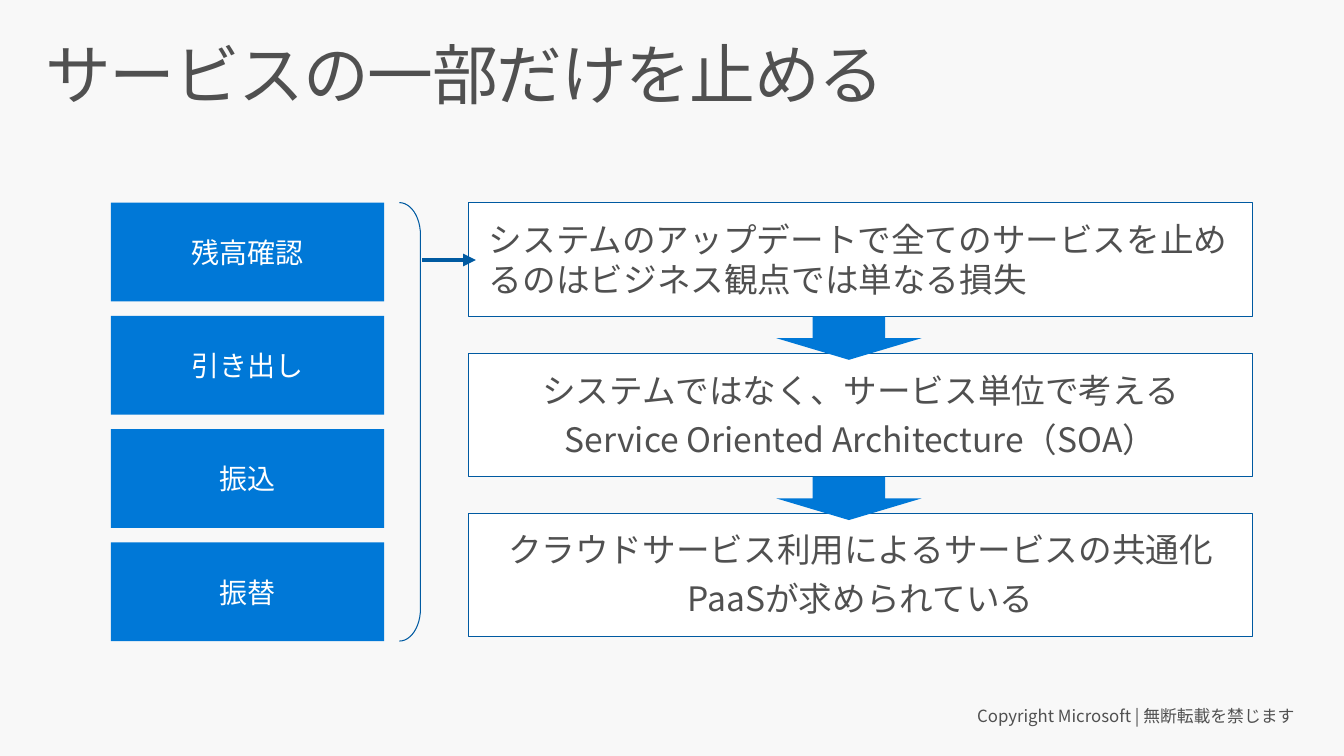
from dataclasses import dataclass

from lxml.etree import SubElement
from pptx import Presentation
from pptx.dml.color import RGBColor
from pptx.enum.shapes import MSO_CONNECTOR as Link, MSO_SHAPE as Kind
from pptx.enum.text import MSO_ANCHOR as Anchor, PP_ALIGN as Align
from pptx.oxml.ns import qn
from pptx.util import Inches, Pt

COLORS = {"page": "F8F8F8", "ink": "505050", "blue": "0078D7",
          "edge": "005AA1", "white": "FFFFFF"}
SANS = "Noto Sans CJK JP"


@dataclass
class Panel:
    top: float
    height: float
    lines: list[str]
    align: Align = Align.CENTER


SERVICES = ["残高確認", "引き出し", "振込", "振替"]
PANELS = [
    Panel(2.01, 1.13, ["システムのアップデートで全てのサービスを止めるのはビジネス観点では単なる損失"], Align.LEFT),
    Panel(3.51, 1.22, ["システムではなく、サービス単位で考える", "Service Oriented Architecture（SOA）"]),
    Panel(5.09, 1.22, ["クラウドサービス利用によるサービスの共通化", "PaaSが求められている"]),
]


def color(name: str) -> RGBColor:
    return RGBColor.from_string(COLORS[name])


def write(shape, lines: list[str], size: float, ink: str = "ink", face: str = SANS,
          align: Align = Align.LEFT, anchor: Anchor = Anchor.TOP, wrap: bool = True,
          pad: tuple[float, float] = (0.2, 0.16), after: float = 0,
          pitch: float | None = None, track: int = 0) -> None:
    """Fill a shape with one paragraph per line; pad is (side, top) in inches."""
    frame = shape.text_frame
    frame.word_wrap = wrap
    frame.vertical_anchor = anchor
    frame.margin_left = frame.margin_right = Inches(pad[0])
    frame.margin_top = frame.margin_bottom = Inches(pad[1])
    for i, line in enumerate(lines):
        para = frame.paragraphs[0] if i == 0 else frame.add_paragraph()
        para.alignment = align
        para.space_before = Pt(0)
        para.space_after = Pt(after)
        if pitch:
            para.line_spacing = pitch
        run = para.add_run()
        run.text = line
        font = run.font
        font.size = Pt(size)
        font.color.rgb = color(ink)
        font.name = face
        props = run._r.get_or_add_rPr()
        props.set("lang", "ja-JP")
        if track:
            props.set("spc", str(track))
        SubElement(props, qn("a:ea")).set("typeface", face)


def draw(slide, kind: Kind, left: float, top: float, width: float, height: float,
         fill: str | None = None, edge: str | None = None):
    shape = slide.shapes.add_shape(kind, Inches(left), Inches(top),
                                   Inches(width), Inches(height))
    shape.shadow.inherit = False
    if fill:
        shape.fill.solid()
        shape.fill.fore_color.rgb = color(fill)
    else:
        shape.fill.background()
    if edge:
        shape.line.color.rgb = color(edge)
        shape.line.width = Pt(0.75)
    else:
        shape.line.fill.background()
    return shape


def link(slide, left: float, right: float, level: float) -> None:
    """Draw a level arrow that points right."""
    line = slide.shapes.add_connector(Link.STRAIGHT, Inches(left), Inches(level),
                                      Inches(right), Inches(level))
    line.line.color.rgb = color("edge")
    line.line.width = Pt(3)
    SubElement(line.line._get_or_add_ln(), qn("a:tailEnd")).set("type", "triangle")
    SubElement(line._element.spPr, qn("a:effectLst"))


def main() -> None:
    deck = Presentation()
    deck.slide_width, deck.slide_height = Inches(13.33), Inches(7.5)
    slide = deck.slides.add_slide(deck.slide_layouts[5])
    slide.background.fill.solid()
    slide.background.fill.fore_color.rgb = color("page")

    title = slide.shapes.title
    title.left, title.top = Inches(0.29), Inches(0.32)
    title.width, title.height = Inches(12.75), Inches(0.98)
    write(title, ["サービスの一部だけを止める"], 47, pad=(0.16, 0.1), pitch=0.9, track=-100)

    for i, name in enumerate(SERVICES):
        box = draw(slide, Kind.RECTANGLE, 1.1, 2.01 + i * 1.124, 2.71, 0.98, "blue")
        write(box, [name], 20, "white", "Arial", Align.CENTER, Anchor.MIDDLE)

    brace = draw(slide, Kind.LEFT_BRACKET, 3.96, 2.01, 0.21, 4.35, edge="edge")
    brace.rotation = 180
    brace.adjustments[0] = 1.53

    for panel in PANELS:
        box = draw(slide, Kind.RECTANGLE, 4.65, panel.top, 7.77, panel.height, "white", "edge")
        write(box, panel.lines, 24, align=panel.align, after=6)
    for panel in PANELS[:-1]:
        draw(slide, Kind.DOWN_ARROW, 7.7, panel.top + panel.height, 1.44, 0.43, "blue")
    link(slide, 4.19, 4.72, 2.58)

    foot = slide.shapes.add_textbox(Inches(9.43), Inches(6.93), Inches(3.61), Inches(0.5))
    write(foot, ["Copyright Microsoft | 無断転載を禁じます"], 12, align=Align.RIGHT,
          wrap=False, after=6, pitch=0.9)

    deck.save("out.pptx")


if __name__ == "__main__":
    main()
